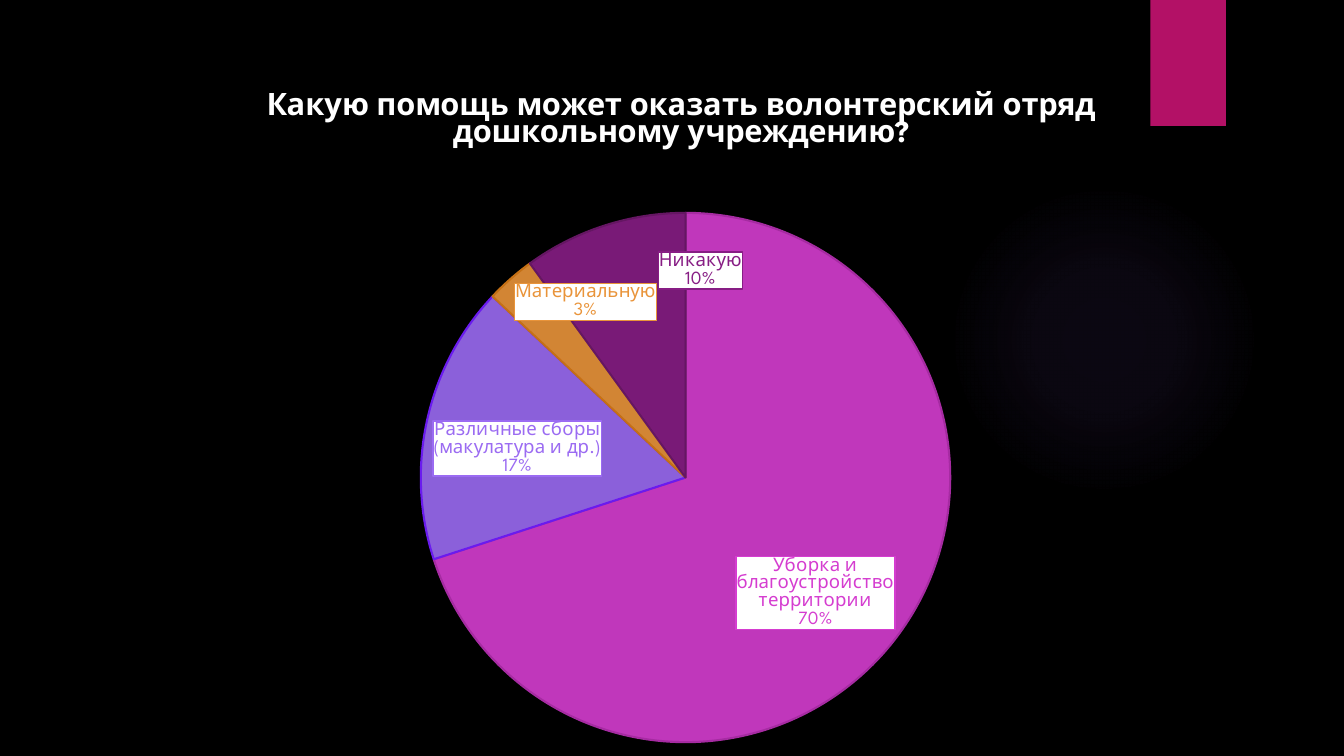
from pptx import Presentation
from pptx.chart.data import CategoryChartData
from pptx.dml.color import RGBColor
from pptx.enum.chart import XL_CHART_TYPE as ChartType, XL_LABEL_POSITION as LabelPosition
from pptx.enum.shapes import MSO_SHAPE as ShapeType
from pptx.oxml import parse_xml
from pptx.oxml.ns import nsdecls
from pptx.util import Inches, Pt

FONT = "League Spartan"
EDGE_MODE = '<c:xMode val="edge"/><c:yMode val="edge"/>'


def color(value):
    return RGBColor.from_string(value)


def manual_layout(x, y, before=EDGE_MODE, after=""):
    return parse_xml(
        f'<c:layout {nsdecls("c")}><c:manualLayout>{before}'
        f'<c:x val="{x}"/><c:y val="{y}"/>{after}</c:manualLayout></c:layout>')


presentation = Presentation()
presentation.slide_width, presentation.slide_height = Inches(13.33), Inches(7.5)
slide = presentation.slides.add_slide(presentation.slide_layouts[6])
slide.background.fill.solid()
slide.background.fill.fore_color.rgb = color("000000")

# Soft glow and accent tab
decorations = [
    (ShapeType.OVAL, 9.41, 1.83, 3.08, 3.08, "9B6BF2"),
    (ShapeType.RECTANGLE, 11.41, 0, 0.75, 1.25, "B31166"),
]
for kind, left, top, width, height, fill in decorations:
    shape = slide.shapes.add_shape(
        kind, Inches(left), Inches(top), Inches(width), Inches(height))
    shape.shadow.inherit = False
    shape.fill.solid()
    shape.fill.fore_color.rgb = color(fill)
    shape.line.fill.background()
    if kind == ShapeType.OVAL:
        stops = "".join(
            f'<a:gs pos="{position * 1000}"><a:srgbClr val="{fill}">'
            f'<a:alpha val="{alpha * 1000}"/></a:srgbClr></a:gs>'
            for position, alpha in [(0, 7), (36, 6), (69, 0)])
        solid = shape._element.spPr.find(".//{*}solidFill")
        solid.getparent().replace(solid, parse_xml(
            f'<a:gradFill {nsdecls("a")}><a:gsLst>{stops}</a:gsLst><a:path path="circle">'
            '<a:fillToRect l="50000" t="50000" r="50000" b="50000"/></a:path></a:gradFill>'))

# Pie chart: category, percent, fill, outline
slices = [
    ("Уборка и благоустройство территории", 70, "D53DD0", "A62BA2"),
    ("Различные сборы (макулатура и др.)", 17, "9B6BF2", "6A1BEE"),
    ("Материальную", 3, "E9943A", "C57015"),
    ("Никакую", 10, "871D84", "651663"),
]
chart_data = CategoryChartData()
chart_data.categories = [name for name, *_ in slices]
chart_data.add_series("Series 1", [percent for _, percent, *_ in slices])
chart = slide.shapes.add_chart(
    ChartType.PIE, Inches(0.26), Inches(0.68), Inches(13.08), Inches(6.82), chart_data).chart
chart.has_legend = False
chart.font.name, chart.font.size = FONT, Pt(10)
chart.font.color.rgb = color("FFFFFF")

# Chart title on two lines
chart.has_title = True
title_frame = chart.chart_title.text_frame
title_frame.text = "Какую помощь может оказать волонтерский отряд\nдошкольному учреждению?"
for paragraph in title_frame.paragraphs:
    title_font = paragraph.runs[0].font
    for name, value in {"name": FONT, "size": Pt(22), "bold": True}.items():
        setattr(title_font, name, value)
    title_font.color.rgb = color("FFFFFF")
title = chart.chart_title._element
for layout in title.findall("{*}layout"):
    title.remove(layout)
title.find("{*}tx").addnext(manual_layout(0.18, 0.03))

# Plot area
plot = chart.plots[0]
plot.vary_by_categories = True
plot_area = plot._element.getparent()
for layout in plot_area.findall("{*}layout"):
    plot_area.remove(layout)
plot_area.insert(0, manual_layout(
    0.29, 0.21, '<c:layoutTarget val="inner"/>' + EDGE_MODE,
    '<c:w val="0.42"/><c:h val="0.77"/>'))

# Slices and their labels
series = plot.series[0]
for index, (_, _, fill, outline) in enumerate(slices):
    point = series.points[index]
    point.format.fill.solid()
    point.format.fill.fore_color.rgb = color(fill)
    point.format.fill._xPr.find(".//{*}srgbClr").append(
        parse_xml(f'<a:alpha {nsdecls("a")} val="90000"/>'))
    point.format.line.color.rgb = color(outline)
    point.format.line.width = Pt(1.5)
    label = point.data_label
    for name, value in {"name": FONT, "size": Pt(13.3)}.items():
        setattr(label.font, name, value)
    label.font.color.rgb = color(fill)
    label.position = LabelPosition.INSIDE_END

label_elements = series._element.findall(".//{*}dLbl")
for element, (_, _, fill, _) in zip(label_elements, slices):
    for flag, value in {"showVal": 0, "showCatName": 1, "showPercent": 1}.items():
        element.find("{*}" + flag).set("val", str(value))
    for old in element.findall("{*}spPr"):
        element.remove(old)
    element.find("{*}txPr").addprevious(parse_xml(
        f'<c:spPr {nsdecls("c", "a")}><a:solidFill><a:srgbClr val="FFFFFF"/></a:solidFill>'
        f'<a:ln w="12700"><a:solidFill><a:srgbClr val="{fill}"/></a:solidFill></a:ln></c:spPr>'))
    element.find("{*}showBubbleSize").addnext(
        parse_xml(f'<c:separator {nsdecls("c")}>\n</c:separator>'))

# Last label sits to the right of its default place
label_elements[-1].find("{*}idx").addnext(manual_layout(0.04, 0.03, before=""))

presentation.save("out.pptx")
